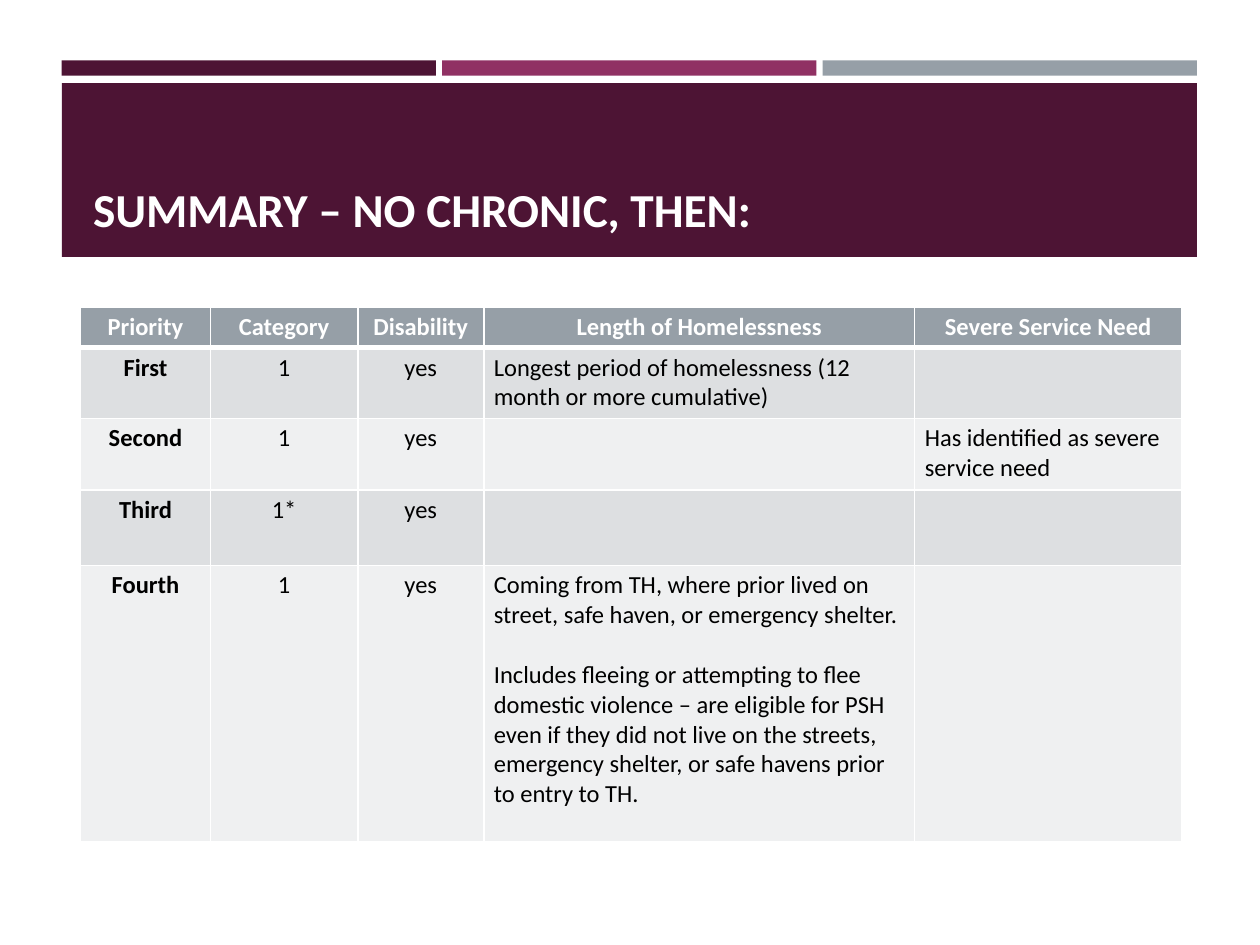
import pptx
import pptx.dml.color
import pptx.enum.shapes
import pptx.enum.text
import pptx.oxml
import pptx.oxml.ns
import pptx.util
from pptx.util import Inches

PLUM, BERRY, GREY = "4D1434", "903163", "969FA7"
WHITE, BLACK = "FFFFFF", "000000"
BANDS = ("DDDFE1", "EFF0F1")
LEFT, CENTER = pptx.enum.text.PP_ALIGN.LEFT, pptx.enum.text.PP_ALIGN.CENTER

HEADERS = ["Priority", "Category", "Disability", "Length of Homelessness", "Severe Service Need"]
ROWS = [
    ["First", "1", "yes", "Longest period of homelessness (12 month or more cumulative)", ""],
    ["Second", "1", "yes", "", "Has identified as severe service need"],
    ["Third", "1*", "yes", "", ""],
    ["Fourth", "1", "yes",
     "Coming from TH, where prior lived on street, safe haven, or emergency shelter.\n"
     "Includes fleeing or attempting to flee domestic violence – are eligible for PSH even if "
     "they did not live on the streets, emergency shelter, or safe havens prior to entry to TH.",
     ""],
]
COLUMN_WIDTHS = [1.03, 1.17, 1, 3.42, 2.12]
ROW_HEIGHTS = [0.32, 0.56, 0.57, 0.6, 2.19]


def paint(color_holder, color):
    """Give a fill a solid colour from a hex string."""
    color_holder.solid()
    color_holder.fore_color.rgb = pptx.dml.color.RGBColor.from_string(color)


def write(frame, text, size=14, color=BLACK, bold=False, align=LEFT, gap=0):
    """Fill a text frame, one paragraph a line, with gap points between them."""
    for index, line in enumerate(text.split("\n")):
        paragraph = frame.paragraphs[0] if index == 0 else frame.add_paragraph()
        paragraph.alignment = align
        paragraph.space_before = pptx.util.Pt(gap if index else 0)
        paragraph.font.size = pptx.util.Pt(size)
        if line:
            run = paragraph.add_run()
            run.text = line
            run.font.name = "Calibri"
            run.font.size = pptx.util.Pt(size)
            run.font.bold = bold
            paint(run.font.fill, color)


def set_borders(cell, color, **widths):
    """Draw cell borders; widths in points are keyed L, R, T and B."""
    properties = cell._tc.get_or_add_tcPr()
    for index, (side, width) in enumerate(widths.items()):
        line = pptx.oxml.parse_xml(
            f'<a:ln{side} {pptx.oxml.ns.nsdecls("a")} w="{pptx.util.Pt(width)}">'
            f'<a:solidFill><a:srgbClr val="{color}"/></a:solidFill></a:ln{side}>')
        properties.insert(index, line)


class SlideBuilder:
    def __init__(self, slide):
        self.slide = slide

    def bar(self, left, top, width, height, color):
        shape = self.slide.shapes.add_shape(
            pptx.enum.shapes.MSO_SHAPE.RECTANGLE,
            Inches(left), Inches(top), Inches(width), Inches(height))
        shape.shadow.inherit = False
        paint(shape.fill, color)
        shape.line.fill.background()

    def title(self, left, top, width, height, text):
        shape = self.slide.shapes.add_textbox(
            Inches(left), Inches(top), Inches(width), Inches(height))
        shape.text_frame.word_wrap = True
        shape.text_frame.vertical_anchor = pptx.enum.text.MSO_ANCHOR.BOTTOM
        write(shape.text_frame, text, size=27, color=WHITE, bold=True)

    def table(self, left, top):
        table = self.slide.shapes.add_table(
            len(ROW_HEIGHTS), len(COLUMN_WIDTHS), Inches(left), Inches(top),
            Inches(sum(COLUMN_WIDTHS)), Inches(sum(ROW_HEIGHTS))).table
        for column, width in zip(table.columns, COLUMN_WIDTHS):
            column.width = Inches(width)
        for row, height in zip(table.rows, ROW_HEIGHTS):
            row.height = Inches(height)
        for row, texts in enumerate([HEADERS] + ROWS):
            for column, text in enumerate(texts):
                self.cell(table.cell(row, column), row, column, text)

    def cell(self, cell, row, column, text):
        header = row == 0
        cell.margin_left = cell.margin_right = Inches(0.08)
        cell.margin_top = cell.margin_bottom = Inches(0.04)
        paint(cell.fill, GREY if header else BANDS[(row - 1) % 2])
        set_borders(cell, WHITE, L=1, R=1, T=3 if row == 1 else 1, B=3 if header else 1)
        write(cell.text_frame, text, color=WHITE if header else BLACK,
              bold=header or column == 0,
              align=CENTER if header or column < 3 else LEFT, gap=17)


def main():
    presentation = pptx.Presentation()
    presentation.slide_width, presentation.slide_height = Inches(10), Inches(7.5)
    builder = SlideBuilder(presentation.slides.add_slide(presentation.slide_layouts[6]))
    for index, color in enumerate((PLUM, BERRY, GREY)):
        builder.bar(0.49 + index * 3.02, 0.48, 2.97, 0.12, color)
    builder.bar(0.49, 0.66, 9.01, 1.38, PLUM)
    builder.title(0.64, 0.75, 8.74, 1.18, "SUMMARY – NO CHRONIC, THEN:")
    builder.table(0.64, 2.44)
    presentation.save("out.pptx")


if __name__ == "__main__":
    main()
